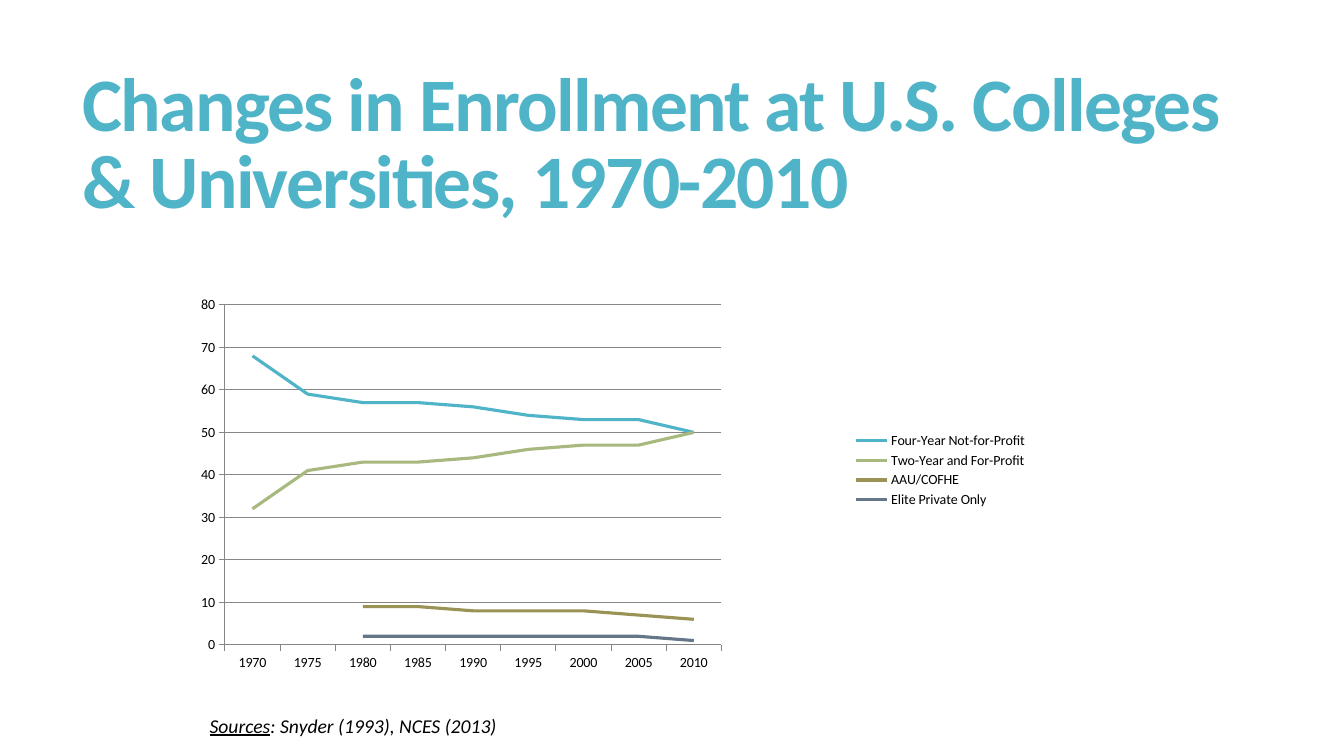
from lxml import etree
from pptx import Presentation
from pptx.chart.data import CategoryChartData
from pptx.dml.color import RGBColor
from pptx.enum.chart import XL_CHART_TYPE, XL_LEGEND_POSITION, XL_TICK_MARK
from pptx.enum.text import MSO_ANCHOR
from pptx.util import Inches, Pt

LINE_CHART = XL_CHART_TYPE.LINE
LEGEND_RIGHT = XL_LEGEND_POSITION.RIGHT
TICK_OUTSIDE = XL_TICK_MARK.OUTSIDE
MIDDLE = MSO_ANCHOR.MIDDLE
TEAL = RGBColor(0x50, 0xB4, 0xC8)
GREEN = RGBColor(0xA8, 0xB9, 0x7F)
OLIVE = RGBColor(0x9B, 0x92, 0x56)
SLATE = RGBColor(0x65, 0x76, 0x89)
GREY = RGBColor(0x86, 0x86, 0x86)
BLACK = RGBColor(0, 0, 0)
FONT = "Calibri"
CHART_NS = "http://schemas.openxmlformats.org/drawingml/2006/chart"

presentation = Presentation()
presentation.slide_width = Inches(13.33)
presentation.slide_height = Inches(7.5)
slide = presentation.slides.add_slide(presentation.slide_layouts[6])


def place(left, top, width, height):
    return (
        int(presentation.slide_width * left / 100),
        int(presentation.slide_height * top / 100),
        int(presentation.slide_width * width / 100),
        int(presentation.slide_height * height / 100),
    )


def set_format(font, values, color):
    for name, value in values.items():
        setattr(font, name, value)
    font.color.rgb = color


title = slide.shapes.add_textbox(*place(5.4, 7.33, 88.37, 24.13))
title.text_frame.word_wrap = True
title.text_frame.vertical_anchor = MIDDLE
title_paragraph = title.text_frame.paragraphs[0]
title_paragraph.line_spacing = 0.85
title_run = title_paragraph.add_run()
title_run.text = "Changes in Enrollment at U.S. Colleges & Universities, 1970-2010"
set_format(title_run.font, {"name": FONT, "size": Pt(54), "bold": True}, TEAL)
title_run.font._element.set("spc", "-120")

enrollment = [
    ("Four-Year Not-for-Profit", TEAL, [68, 59, 57, 57, 56, 54, 53, 53, 50]),
    ("Two-Year and For-Profit", GREEN, [32, 41, 43, 43, 44, 46, 47, 47, 50]),
    ("AAU/COFHE", OLIVE, [None, None, 9, 9, 8, 8, 8, 7, 6]),
    ("Elite Private Only", SLATE, [None, None, 2, 2, 2, 2, 2, 2, 1]),
]
chart_data = CategoryChartData()
chart_data.categories = [str(year) for year in range(1970, 2011, 5)]
for name, color, shares in enrollment:
    chart_data.add_series(name, shares)

chart = slide.shapes.add_chart(LINE_CHART, *place(14.48, 35.2, 62.72, 54), chart_data).chart
set_format(chart.font, {"name": FONT, "size": Pt(10)}, BLACK)
chart.has_title = False
chart.has_legend = True
chart.legend.position = LEGEND_RIGHT
chart.legend.include_in_layout = False
chart.plots[0].vary_by_categories = False

value_axis = chart.value_axis
for name, value in {"minimum_scale": 0, "maximum_scale": 80, "major_unit": 10}.items():
    setattr(value_axis, name, value)
value_axis.has_major_gridlines = True
for axis in (chart.category_axis, value_axis):
    axis.major_tick_mark = TICK_OUTSIDE
for line in (chart.category_axis.format.line, value_axis.format.line,
             value_axis.major_gridlines.format.line):
    line.color.rgb = GREY
    line.width = Pt(0.75)

for series, (name, color, shares) in zip(chart.plots[0].series, enrollment):
    series.smooth = False
    series.format.line.color.rgb = color
    series.format.line.width = Pt(2.25)

plot_area = chart._chartSpace.chart.plotArea
for layout in plot_area.findall(f"{{{CHART_NS}}}layout"):
    plot_area.remove(layout)
layout = etree.Element(f"{{{CHART_NS}}}layout")
manual = etree.SubElement(layout, f"{{{CHART_NS}}}manualLayout")
for tag, value in {"layoutTarget": "inner", "xMode": "edge", "yMode": "edge",
                   "x": 0.036, "y": 0.095, "w": 0.589, "h": 0.833}.items():
    etree.SubElement(manual, f"{{{CHART_NS}}}{tag}").set("val", str(value))
plot_area.insert(0, layout)

sources = slide.shapes.add_textbox(*place(14.85, 93.73, 22.88, 4.53))
sources.text_frame.word_wrap = False
for text, underline in (("Sources", True), (": Snyder (1993), NCES (2013)", False)):
    run = sources.text_frame.paragraphs[0].add_run()
    run.text = text
    set_format(run.font, {"name": FONT, "size": Pt(14), "italic": True,
                          "underline": underline}, BLACK)

presentation.save("out.pptx")
